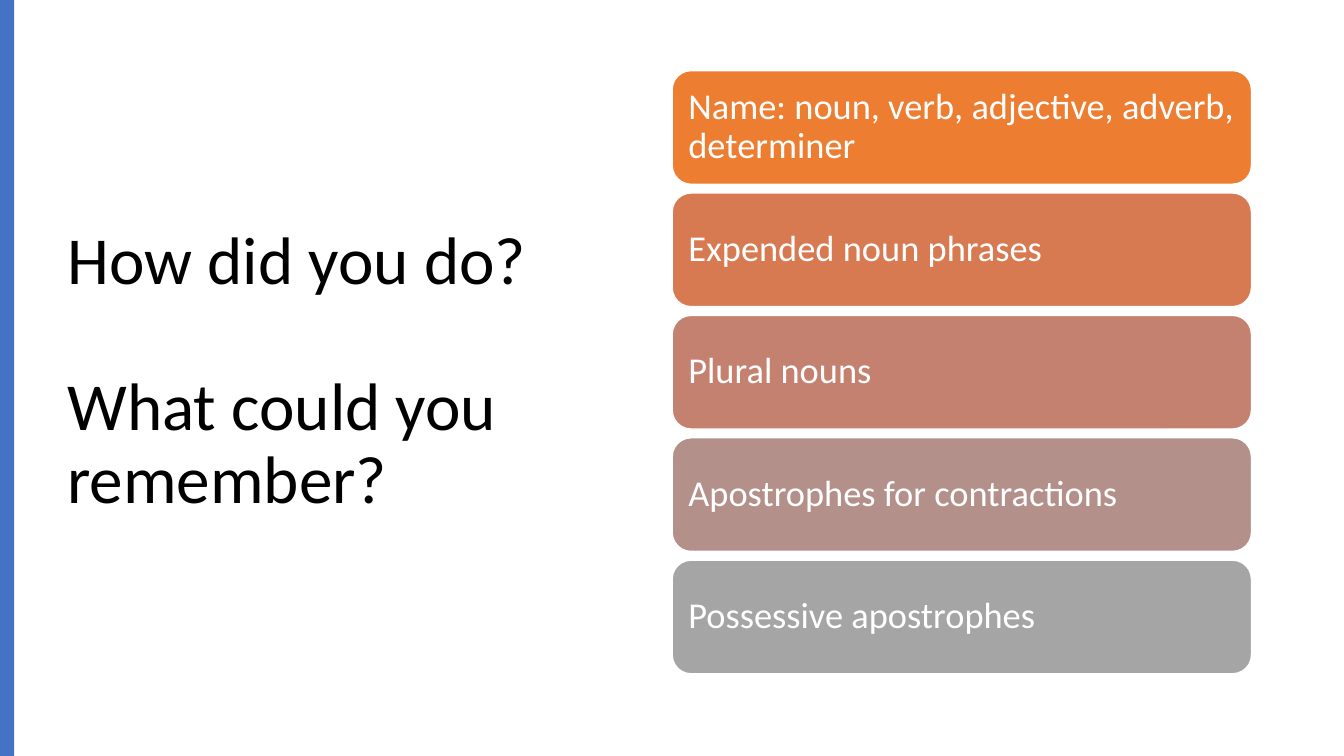
from dataclasses import dataclass

from pptx import Presentation
from pptx.dml.color import RGBColor
from pptx.enum.shapes import MSO_SHAPE as Shape
from pptx.enum.text import MSO_ANCHOR as Anchor, PP_ALIGN as Align
from pptx.util import Cm, Pt


@dataclass(frozen=True)
class Theme:
    """Colours and type of the slide."""
    font: str = "Calibri"
    question_size: float = 48
    topic_size: float = 26
    question_gap: float = 52.7
    line_spacing: float = 0.9
    ink: str = "000000"
    paper: str = "FFFFFF"
    accent: str = "4472C4"
    topic_fills: tuple = ("ED7D31", "D87A51", "C48170", "B4908B", "A5A5A5")


THEME = Theme()
SLIDE_WIDTH, SLIDE_HEIGHT = 33.87, 19.05
QUESTIONS = ("How did you do?", "What could you remember?")
TOPICS = (
    "Name: noun, verb, adjective, adverb, determiner",
    "Expended noun phrases",
    "Plural nouns",
    "Apostrophes for contractions",
    "Possessive apostrophes",
)


def write(paragraph, text, size, colour):
    """Fill a paragraph with left-aligned text in the theme font."""
    paragraph.text = text
    paragraph.alignment = Align.LEFT
    paragraph.line_spacing = THEME.line_spacing
    paragraph.font.name = THEME.font
    paragraph.font.size = Pt(size)
    paragraph.font.color.rgb = RGBColor.from_string(colour)


def add_panel(slide, preset, box, fill):
    """Add a flat filled shape without an outline in a box given in cm."""
    panel = slide.shapes.add_shape(preset, *map(Cm, box))
    panel.shadow.inherit = False
    panel.fill.solid()
    panel.fill.fore_color.rgb = RGBColor.from_string(fill)
    panel.line.fill.background()
    return panel


def add_questions(slide, box):
    """Place the questions, vertically centred, in the box."""
    frame = slide.shapes.add_textbox(*map(Cm, box)).text_frame
    frame.word_wrap = True
    frame.vertical_anchor = Anchor.MIDDLE
    for index, question in enumerate(QUESTIONS):
        paragraph = frame.add_paragraph() if index else frame.paragraphs[0]
        write(paragraph, question, THEME.question_size, THEME.ink)
        if index:
            paragraph.space_before = Pt(THEME.question_gap)


def add_topics(slide, box, gap=0.22, inset=0.27):
    """Stack one rounded card per topic, evenly spaced, in the box."""
    left, top, width, height = box
    card_height = (height - gap * (len(TOPICS) - 1)) / len(TOPICS)
    for row, (topic, fill) in enumerate(zip(TOPICS, THEME.topic_fills)):
        card_top = top + row * (card_height + gap)
        card = add_panel(slide, Shape.ROUNDED_RECTANGLE,
                         (left, card_top, width, card_height), fill)
        card.line.color.rgb = RGBColor.from_string(THEME.paper)
        card.line.width = Pt(1)
        frame = card.text_frame
        frame.word_wrap = True
        frame.vertical_anchor = Anchor.MIDDLE
        frame.margin_left = frame.margin_right = Cm(inset)
        frame.margin_top = frame.margin_bottom = Cm(inset)
        write(frame.paragraphs[0], topic, THEME.topic_size, THEME.paper)


def main():
    """Build the review slide and save it."""
    deck = Presentation()
    deck.slide_width, deck.slide_height = Cm(SLIDE_WIDTH), Cm(SLIDE_HEIGHT)
    slide = deck.slides.add_slide(deck.slide_layouts[6])
    add_questions(slide, (1.45, 1.73, 14.4, 15.29))
    add_panel(slide, Shape.RECTANGLE, (0, 0, 0.36, SLIDE_HEIGHT), THEME.accent)
    add_topics(slide, (16.94, 1.78, 14.6, 15.2))
    deck.save("out.pptx")


if __name__ == "__main__":
    main()
